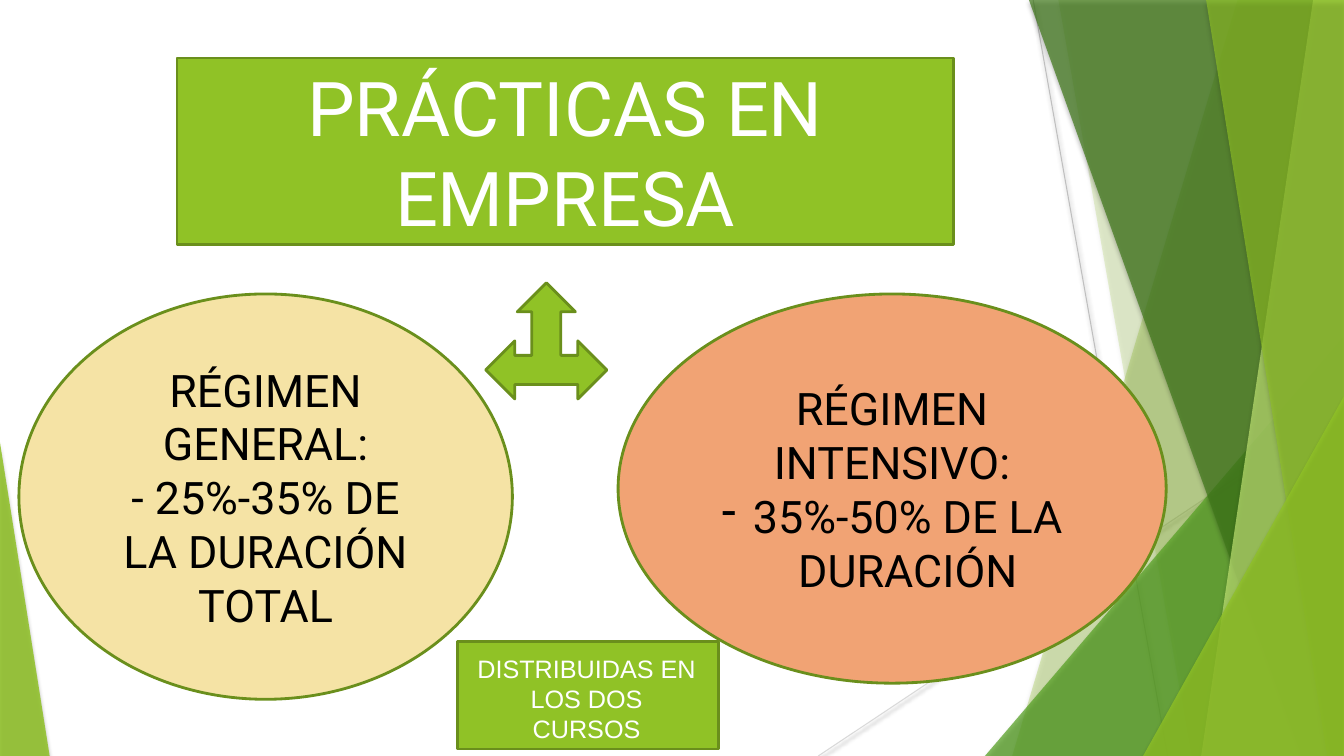
"""Builds a slide on the two regimes of company placements."""
from collections import namedtuple

from lxml import etree
from pptx import Presentation
from pptx.dml.color import RGBColor
from pptx.enum import shapes, text
from pptx.oxml import ns
from pptx.util import Pt

Box = namedtuple("Box", "left top width height")

WHITE = RGBColor(0xFF, 0xFF, 0xFF)
BLACK = RGBColor(0, 0, 0)
LIME = RGBColor(0x90, 0xC2, 0x26)
OLIVE = RGBColor(0x6A, 0x8F, 0x1C)
GREEN = RGBColor(0x54, 0xA0, 0x21)
FOREST = RGBColor(0x3F, 0x78, 0x19)
PALE_LIME = RGBColor(0xC0, 0xE4, 0x74)
CREAM = RGBColor(0xF5, 0xE3, 0xA5)
SALMON = RGBColor(0xF1, 0xA3, 0x74)
GREY = RGBColor(0xBF, 0xBF, 0xBF)
LIGHT_GREY = RGBColor(0xD9, 0xD9, 0xD9)


def add_child(parent, tag, **attributes):
    """Append a DrawingML element to its parent."""
    child = etree.SubElement(parent, ns.qn(tag))
    for name, value in attributes.items():
        child.set(name, str(value))
    return child


def add_shadow(item, alpha, blur, distance):
    """Give a shape or connector a soft black shadow below it."""
    effects = add_child(item._element.spPr, "a:effectLst")
    shadow = add_child(effects, "a:outerShdw", blurRad=Pt(blur), dist=Pt(distance),
                       dir=5400000, algn="ctr", rotWithShape=0)
    color = add_child(shadow, "a:srgbClr", val="000000")
    add_child(color, "a:alpha", val=alpha * 1000)


def style_facet(facet, color, opacity):
    """Fill a background facet with a translucent colour."""
    facet.fill.solid()
    facet.fill.fore_color.rgb = color
    facet.line.fill.background()
    fill = facet._element.spPr.find(ns.qn("a:solidFill"))
    add_child(fill[0], "a:alpha", val=opacity * 1000)
    add_shadow(facet, 35, 3, 2)


def add_ray(page, box, start, end, color):
    """Draw a thin background line between two points of the box."""
    ray = page.shapes.add_connector(
        shapes.MSO_CONNECTOR.STRAIGHT,
        Pt(box.left + start[0]), Pt(box.top + start[1]),
        Pt(box.left + end[0]), Pt(box.top + end[1]))
    ray.line.color.rgb = color
    ray.line.width = Pt(0.75)
    add_shadow(ray, 38, 3.1, 1.6)


def add_band(page, box, top_x, bottom_x, color, opacity):
    """Draw a facet from a slanted left side to the right edge of the box."""
    right, bottom = box.left + box.width, box.top + box.height
    outline = page.shapes.build_freeform(Pt(box.left + top_x), Pt(box.top))
    outline.add_line_segments([
        (Pt(right), Pt(box.top)), (Pt(right), Pt(bottom)),
        (Pt(box.left + bottom_x), Pt(bottom))])
    style_facet(outline.convert_to_shape(), color, opacity)


def add_corner(page, box, width, height, apex, color, opacity):
    """Draw a triangle in the bottom left (0) or right (1) corner of the box."""
    corner = page.shapes.add_shape(
        shapes.MSO_SHAPE.ISOSCELES_TRIANGLE,
        Pt(box.left + apex * (box.width - width)),
        Pt(box.top + box.height - height), Pt(width), Pt(height))
    corner.adjustments[0] = apex
    style_facet(corner, color, opacity)


def add_backdrop(page, box):
    """Draw the faceted green backdrop, from back to front."""
    add_ray(page, box, (738, 0), (834, 540), GREY)
    add_ray(page, box, (960, 290), (584.5, 540), LIGHT_GREY)
    add_band(page, box, 884, 723, LIME, 30)
    add_band(page, box, 756, 851, LIME, 20)
    add_corner(page, box, 256.5, 300, 1, GREEN, 72)
    add_band(page, box, 735, 929.5, FOREST, 70)
    add_band(page, box, 938, 858, PALE_LIME, 70)
    add_band(page, box, 861.5, 948, LIME, 65)
    add_corner(page, box, 143.5, 257, 1, LIME, 80)
    add_corner(page, box, 35.5, 224, 0, LIME, 85)


def write(shape, lines, size, font, color):
    """Put centred lines into a shape and return its paragraphs."""
    frame = shape.text_frame
    frame.word_wrap = True
    frame.text = "\n".join(lines)
    for para in frame.paragraphs:
        para.alignment = text.PP_ALIGN.CENTER
        for span in para.runs:
            span.font.size = Pt(size)
            span.font.name = font
            span.font.color.rgb = color
    return frame.paragraphs


def add_panel(page, box, kind, color):
    """Draw an olive-edged shape that fills the box."""
    panel = page.shapes.add_shape(kind, *map(Pt, box))
    panel.shadow.inherit = False
    panel.fill.solid()
    panel.fill.fore_color.rgb = color
    panel.line.color.rgb = OLIVE
    panel.line.width = Pt(2)
    panel.text_frame.vertical_anchor = text.MSO_ANCHOR.MIDDLE
    return panel


def add_title(page, box):
    """Draw the title banner."""
    banner = add_panel(page, box, shapes.MSO_SHAPE.RECTANGLE, LIME)
    write(banner, ["PRÁCTICAS EN EMPRESA"], 54, "Roboto", WHITE)


def add_regime(page, box, color, lines):
    """Draw one regime as an ellipse and return its paragraphs."""
    ellipse = add_panel(page, box, shapes.MSO_SHAPE.OVAL, color)
    return write(ellipse, lines, 32, "Roboto", BLACK)


def add_dash(para):
    """Turn a paragraph into a dash item with a hanging indent."""
    properties = para._p.get_or_add_pPr()
    properties.set("marL", str(Pt(22.5)))
    properties.set("indent", str(Pt(-22.5)))
    bullet_color = add_child(properties, "a:buClr")
    add_child(bullet_color, "a:srgbClr", val=BLACK)
    add_child(properties, "a:buChar", char="-")


def add_note(page, box):
    """Draw the note on how the placements are spread."""
    add_panel(page, box, shapes.MSO_SHAPE.RECTANGLE, LIME)
    label = page.shapes.add_textbox(
        Pt(box.left + 6), Pt(box.top + 4.5), Pt(box.width - 14.5), Pt(box.height - 4.5))
    write(label, ["DISTRIBUIDAS EN LOS DOS CURSOS"], 18, "Arial", WHITE)


def main():
    """Build and save the deck."""
    deck = Presentation()
    deck.slide_width, deck.slide_height = Pt(960), Pt(540)
    page = deck.slides.add_slide(deck.slide_layouts[6])
    add_backdrop(page, Box(0, 0, 960, 540))
    add_title(page, Box(126.5, 41.5, 554.5, 133))
    add_regime(page, Box(13.5, 210, 352.5, 289.5), CREAM,
               ["RÉGIMEN GENERAL:", "- 25%-35% DE LA DURACIÓN TOTAL"])
    intensive = add_regime(page, Box(441.5, 210, 391.5, 278), SALMON,
                           ["RÉGIMEN INTENSIVO:", "35%-50% DE LA DURACIÓN"])
    add_dash(intensive[1])
    add_panel(page, Box(347, 202, 86.5, 83),
              shapes.MSO_SHAPE.LEFT_RIGHT_UP_ARROW, LIME)
    add_note(page, Box(327, 458.5, 186.5, 76.5))
    deck.save("out.pptx")


if __name__ == "__main__":
    main()
